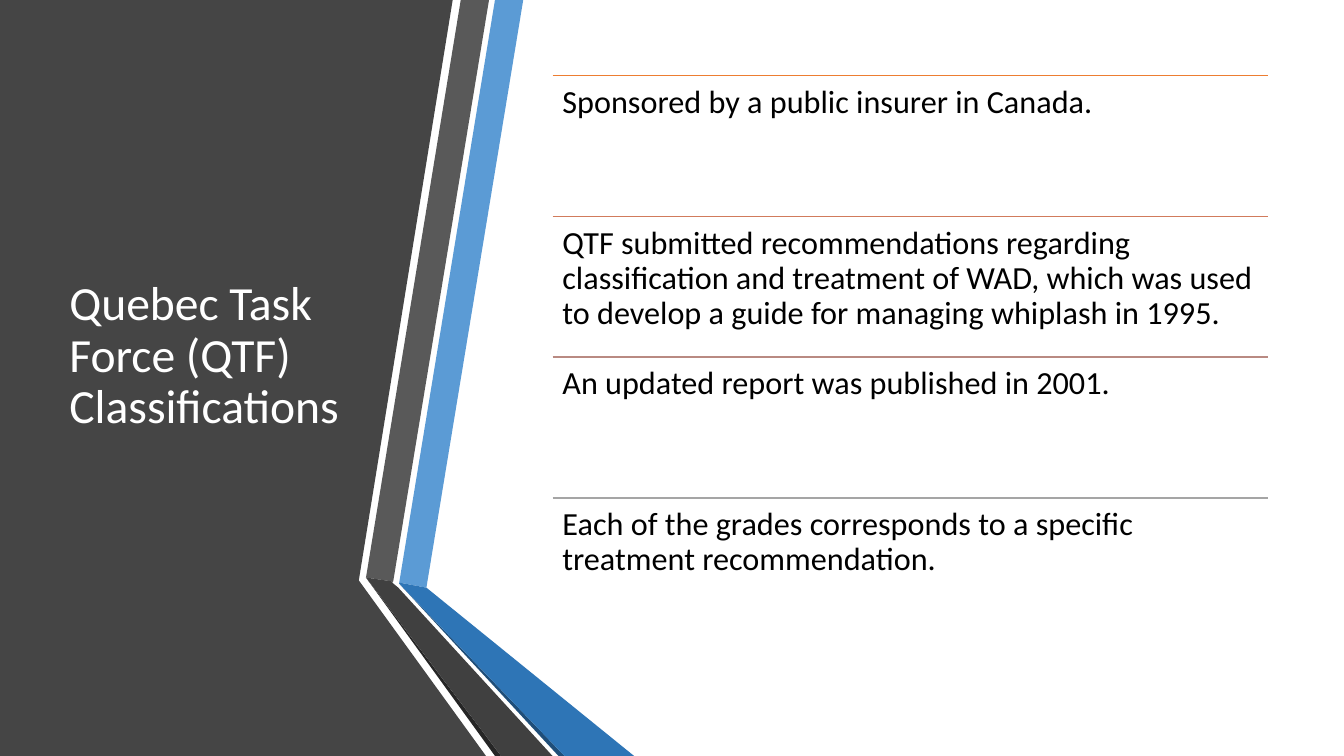
from lxml import etree
from pptx import Presentation
from pptx.dml.color import RGBColor
from pptx.enum.shapes import MSO_CONNECTOR
from pptx.enum.text import MSO_ANCHOR
from pptx.oxml.ns import qn
from pptx.util import Pt

STRAIGHT = MSO_CONNECTOR.STRAIGHT
TOP = MSO_ANCHOR.TOP
MIDDLE = MSO_ANCHOR.MIDDLE
SCALE = 9144
FONT = "Calibri"
ROW_LEFT, ROW_TOP, ROW_WIDTH, ROW_HEIGHT = 548, 75, 710, 140
ROWS_SPAN = 419

BANDS = [
    ("454545", [(0, 0), (449, 0), (356, 575), (356, 576), (482, 750), (0, 750)]),
    ("5B9BD5", [(396, 578), (423, 583), (519, 0), (491, 0)]),
    ("595959", [(485, 0), (457, 0), (363, 573), (390, 577)]),
    ("262626", [(363, 573), (491, 750), (497, 750)]),
    ("1F4E79", [(396, 579), (554, 750), (560, 750)]),
    ("2E75B6", [(396, 579), (560, 750), (629, 750), (423, 583), (396, 578)]),
    ("404040", [(548, 750), (395, 583), (389, 578), (390, 577), (363, 573), (497, 750)]),
]

ROWS = [
    ("ED7D31", "Sponsored by a public insurer in Canada."),
    ("D17B5C", "QTF submitted recommendations regarding classification and treatment "
               "of WAD, which was used to develop a guide for managing whiplash in 1995."),
    ("B98A82", "An updated report was published in 2001."),
    ("A5A5A5", "Each of the grades corresponds to a specific treatment recommendation."),
]


def px(length):
    """Turn whole pixels into EMU."""
    return length * SCALE


def color(code):
    """Turn a hex string into a colour."""
    return RGBColor.from_string(code)


def add_band(page, fill, points):
    """Draw a filled polygon through the points."""
    builder = page.shapes.build_freeform(*points[0], scale=SCALE)
    builder.add_line_segments(points[1:], close=True)
    band = builder.convert_to_shape()
    band.shadow.inherit = False
    band.fill.solid()
    band.fill.fore_color.rgb = color(fill)
    band.line.fill.background()


def add_rule(page, left, top, width, stroke):
    """Draw a thin horizontal line."""
    rule = page.shapes.add_connector(
        STRAIGHT, px(left), px(top), px(left + width), px(top))
    rule.line.color.rgb = color(stroke)
    rule.line.width = Pt(1)
    etree.SubElement(rule._element.spPr, qn("a:effectLst"))


def add_text(page, left, top, width, height, text, size, ink, anchor, inset):
    """Place one wrapped paragraph in a text box."""
    box = page.shapes.add_textbox(px(left), px(top), px(width), px(height))
    frame = box.text_frame
    frame.word_wrap = True
    frame.vertical_anchor = anchor
    frame.margin_left = frame.margin_right = px(10)
    frame.margin_top = frame.margin_bottom = px(inset)
    para = frame.paragraphs[0]
    para.text = text
    para.line_spacing = 0.9
    para.font.name = FONT
    para.font.size = Pt(size)
    para.font.color.rgb = color(ink)


def main():
    """Build the slide and save it."""
    deck = Presentation()
    deck.slide_width, deck.slide_height = px(1333), px(750)
    page = deck.slides.add_slide(deck.slide_layouts[6])
    for fill, points in BANDS:
        add_band(page, fill, points)
    add_text(page, 59, 75, 304, 558, "Quebec Task Force (QTF) Classifications",
             34, "FFFFFF", MIDDLE, 5)
    for index, (stroke, text) in enumerate(ROWS):
        top = ROW_TOP + round(ROWS_SPAN * index / (len(ROWS) - 1))
        add_rule(page, ROW_LEFT, top, ROW_WIDTH, stroke)
        add_text(page, ROW_LEFT, top, ROW_WIDTH, ROW_HEIGHT, text,
                 23, "000000", TOP, 10)
    deck.save("out.pptx")


if __name__ == "__main__":
    main()
